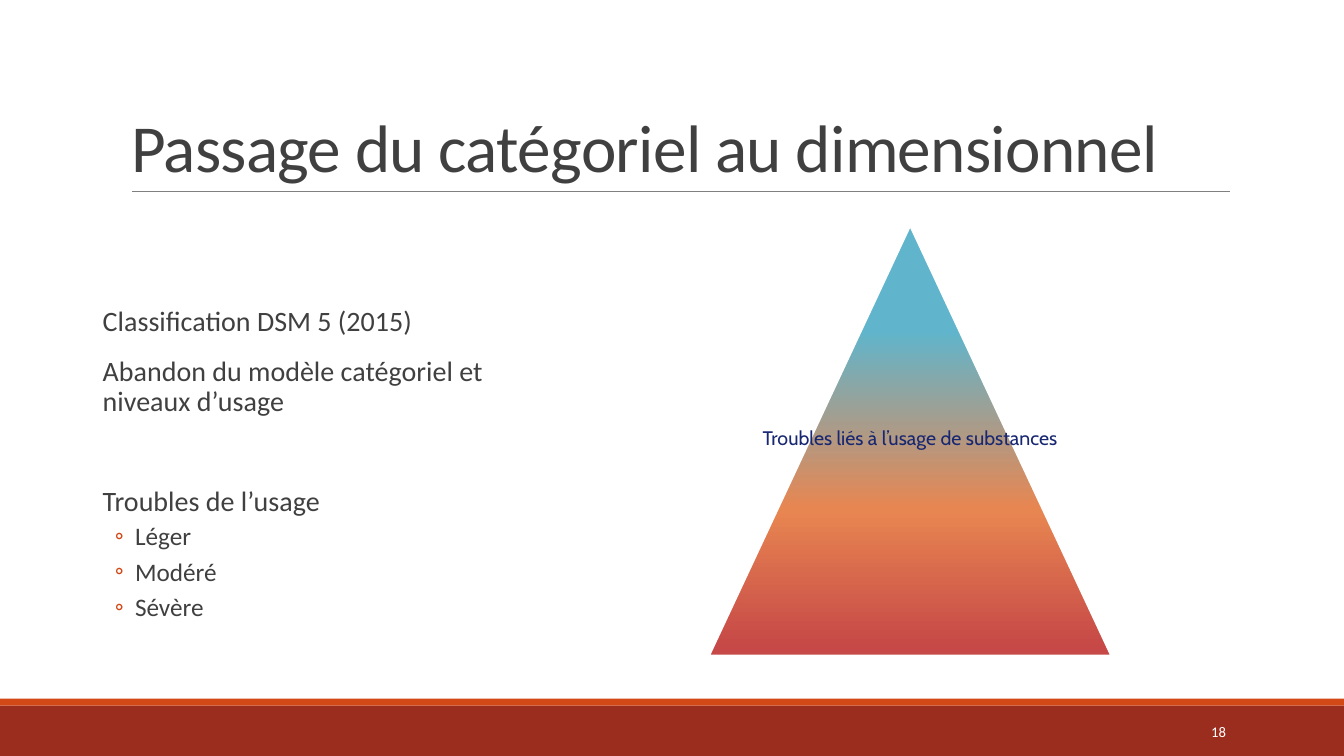
import pptx
import pptx.dml.color
import pptx.enum.shapes
import pptx.enum.text
import pptx.oxml
import pptx.oxml.ns
import pptx.util

Pt = pptx.util.Pt
RGBColor = pptx.dml.color.RGBColor
Shape = pptx.enum.shapes.MSO_SHAPE
Anchor = pptx.enum.text.MSO_ANCHOR
Align = pptx.enum.text.PP_ALIGN

WHITE = RGBColor(0xFF, 0xFF, 0xFF)
BRICK = RGBColor(0x9B, 0x2D, 0x1F)
ORANGE = RGBColor(0xD3, 0x48, 0x17)
GRAY = RGBColor(0x80, 0x80, 0x80)
INK = RGBColor(0x40, 0x40, 0x40)
NAVY = RGBColor(0x17, 0x27, 0x71)
RED = RGBColor(0xC6, 0x48, 0x47)
APRICOT = RGBColor(0xE8, 0x86, 0x51)
SKY = RGBColor(0x60, 0xB5, 0xCC)

DRAWING_NS = pptx.oxml.ns.nsdecls("a")
TOPIC = {"line_spacing": 0.9, "space_before": Pt(12), "space_after": Pt(2)}
LEVEL = {"line_spacing": 0.9, "space_before": Pt(2), "space_after": Pt(4), "level": 1}
BODY = [
    ("Classification DSM 5 (2015)", 20, TOPIC | {"space_before": Pt(0)}),
    ("Abandon du modèle catégoriel et niveaux d’usage", 20, TOPIC),
    ("Troubles de l’usage", 20, TOPIC | {"space_before": Pt(48)}),
    ("Léger", 18, LEVEL),
    ("Modéré", 18, LEVEL),
    ("Sévère", 18, LEVEL),
]


def apply(target, formats):
    """Set every attribute named in formats on target."""
    for name, value in formats.items():
        setattr(target, name, value)


def points(box):
    """Turn a box of plain numbers into lengths."""
    return [Pt(length) for length in box]


def set_frame(frame, anchor, side, top):
    """Wrap a text frame and set its anchor and margins."""
    apply(frame, {
        "word_wrap": True, "auto_size": pptx.enum.text.MSO_AUTO_SIZE.NONE,
        "vertical_anchor": anchor, "margin_left": Pt(side), "margin_right": Pt(side),
        "margin_top": Pt(top), "margin_bottom": Pt(top),
    })


def write(para, text, size, color, formats, font="Calibri"):
    """Write one formatted span into a paragraph and return it."""
    apply(para, formats)
    span = para.add_run()
    span.text = text
    apply(span.font, {"name": font, "size": Pt(size)})
    span.font.color.rgb = color
    return span


def set_bullet(para, color):
    """Give a paragraph a hanging ring bullet."""
    properties = para._p.get_or_add_pPr()
    properties.set("marL", str(Pt(30.24)))
    properties.set("indent", str(-Pt(14.4)))
    for xml in (f'<a:buClr {DRAWING_NS}><a:srgbClr val="{color}"/></a:buClr>',
                f'<a:buFont {DRAWING_NS} typeface="Calibri"/>',
                f'<a:buChar {DRAWING_NS} char="◦"/>'):
        properties.append(pptx.oxml.parse_xml(xml))


def add_title(page, box):
    """Place the title and the rule below it."""
    left, top, width, height = box
    title = page.shapes.title
    apply(title, dict(zip(("left", "top", "width", "height"), points(box))))
    set_frame(title.text_frame, Anchor.BOTTOM, 7.2, 3.6)
    span = write(title.text_frame.paragraphs[0], "Passage du catégoriel au dimensionnel",
                 48, INK, {"line_spacing": 0.85, "alignment": Align.LEFT})
    span._r.get_or_add_rPr().set("spc", "-50")
    rule_top = top + height
    rule = page.shapes.add_connector(
        pptx.enum.shapes.MSO_CONNECTOR.STRAIGHT,
        *points((left + 7.9, rule_top, left + width - 0.1, rule_top)))
    rule.line.color.rgb = GRAY
    rule.line.width = Pt(0.5)
    rule._element.spPr.append(pptx.oxml.parse_xml(f"<a:effectLst {DRAWING_NS}/>"))


def add_body(page, box):
    """Place the topics and the severity levels."""
    frame = page.shapes.add_textbox(*points(box)).text_frame
    set_frame(frame, Anchor.TOP, 0, 0)
    for index, (text, size, formats) in enumerate(BODY):
        para = frame.add_paragraph() if index else frame.paragraphs[0]
        write(para, text, size, INK, formats)
        if formats is LEVEL:
            set_bullet(para, ORANGE)
        else:
            para._p.get_or_add_pPr().set("marL", str(Pt(7.2)))


def add_pyramid(page, box):
    """Place the graded pyramid and its label."""
    pyramid = page.shapes.add_shape(Shape.TRAPEZOID, *points(box))
    pyramid.adjustments[0] = 0.5
    pyramid.shadow.inherit = False
    pyramid.line.color.rgb = WHITE
    pyramid.line.width = Pt(3.78)
    stops = "".join(f'<a:gs pos="{percent * 1000}"><a:srgbClr val="{color}"/></a:gs>'
                    for percent, color in ((2, RED), (34, APRICOT), (75, SKY)))
    pyramid._element.spPr.find(pptx.oxml.ns.qn("a:prstGeom")).addnext(pptx.oxml.parse_xml(
        f'<a:gradFill {DRAWING_NS} rotWithShape="1"><a:gsLst>{stops}</a:gsLst>'
        '<a:lin ang="16200000" scaled="0"/></a:gradFill>'))
    frame = page.shapes.add_textbox(*points(box)).text_frame
    set_frame(frame, Anchor.MIDDLE, 1.4, 1.4)
    write(frame.paragraphs[0], "Troubles liés à l’usage de substances", 14, NAVY,
          {"line_spacing": 0.9, "alignment": Align.CENTER}, "Cabin")


def add_footer(page, box):
    """Place the two bottom bands and the page number."""
    left, top, width, height = box
    stripe = 5
    for band_top, band_height, color in ((top + stripe, height - stripe, BRICK),
                                         (top, stripe, ORANGE)):
        band = page.shapes.add_shape(
            Shape.RECTANGLE, *points((left, band_top, width, band_height)))
        band.shadow.inherit = False
        band.fill.solid()
        band.fill.fore_color.rgb = color
        band.line.fill.background()
    number = page.shapes.add_textbox(*points((left + width - 180.2, top + 9.3, 103, 28.8)))
    set_frame(number.text_frame, Anchor.MIDDLE, 7.2, 3.6)
    write(number.text_frame.paragraphs[0], "18", 10.5, WHITE, {"alignment": Align.RIGHT})


def main():
    """Build and save the deck."""
    deck = pptx.Presentation()
    apply(deck, {"slide_width": Pt(960), "slide_height": Pt(540)})
    page = deck.slides.add_slide(deck.slide_layouts.get_by_name("Title Only"))
    add_footer(page, (0, 499, 960, 41))
    add_title(page, (86.4, 22.3, 792, 114.5))
    add_body(page, (66.2, 219.6, 311, 267))
    add_pyramid(page, (504.7, 158.4, 290.9, 311))
    deck.save("out.pptx")


if __name__ == "__main__":
    main()
